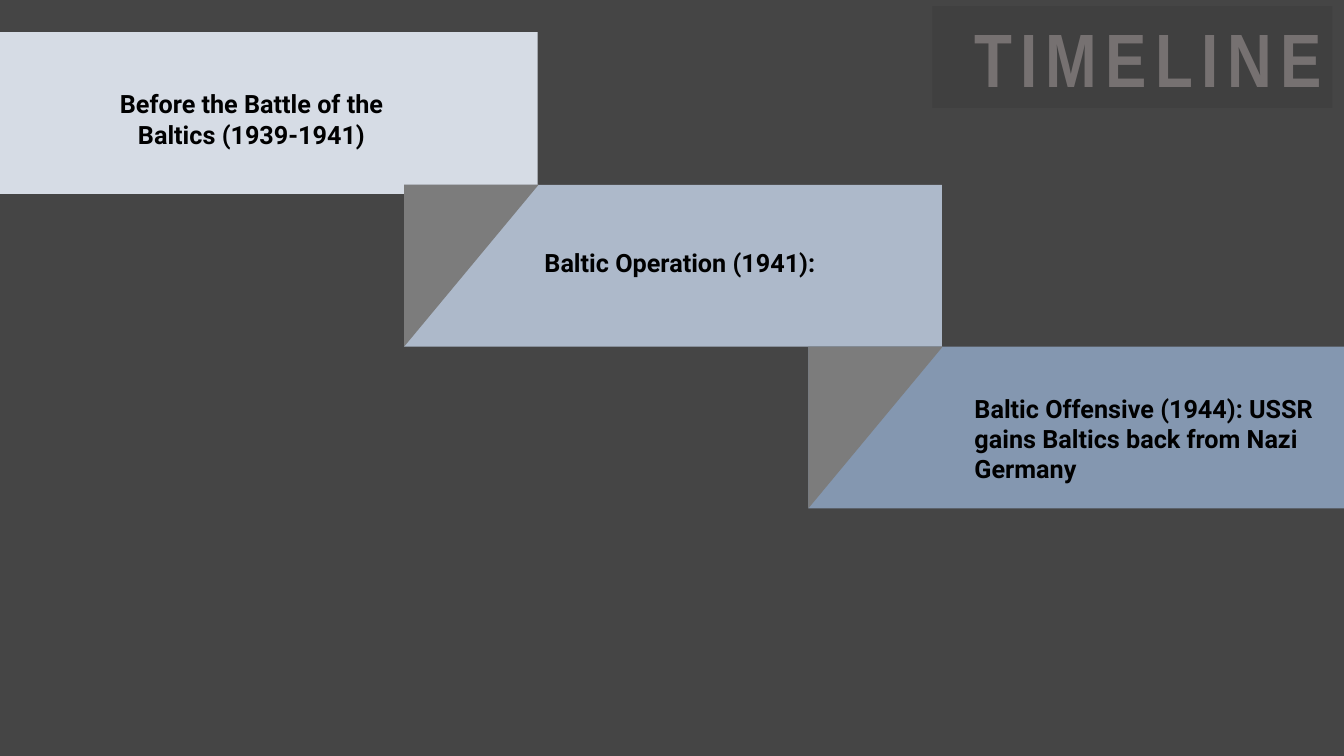
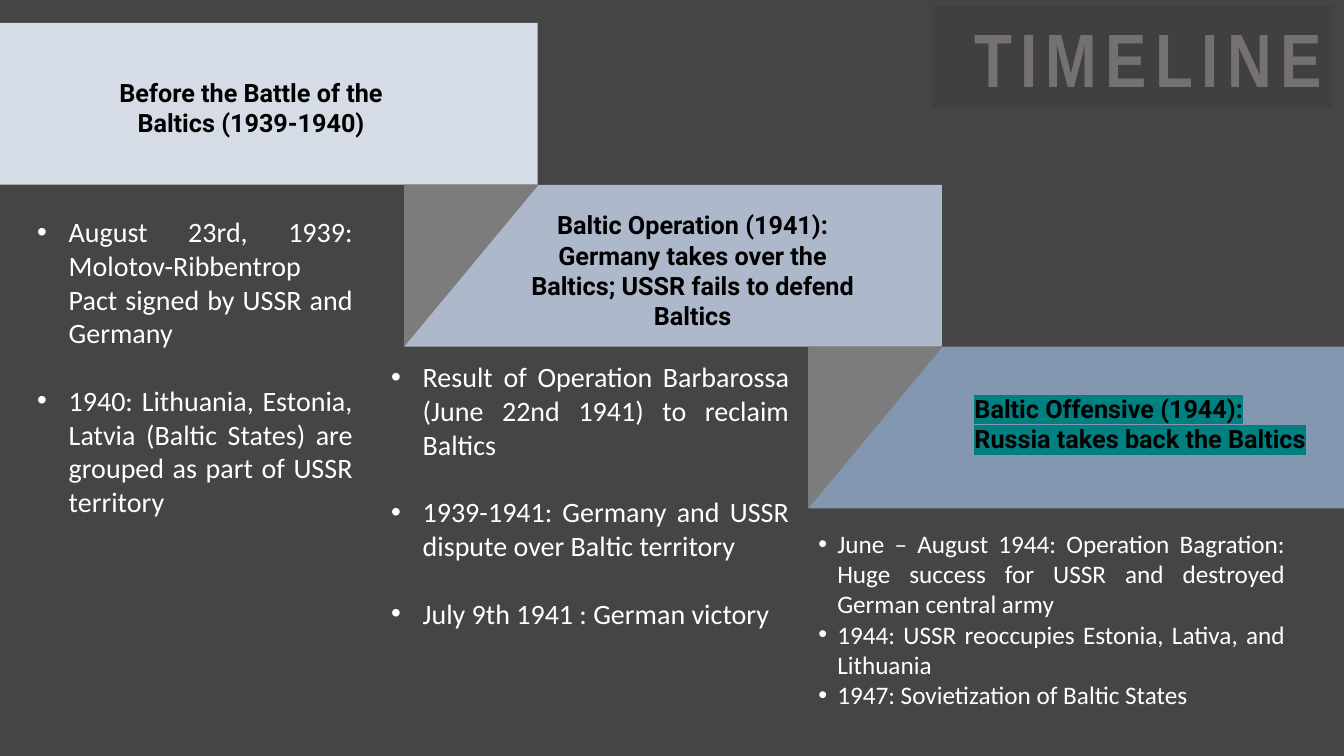
from lxml.etree import SubElement
from pptx import Presentation
from pptx.dml.color import RGBColor
from pptx.enum.shapes import MSO_SHAPE
from pptx.enum.text import MSO_ANCHOR, MSO_AUTO_SIZE, PP_ALIGN
from pptx.oxml import parse_xml
from pptx.oxml.ns import nsdecls, qn
from pptx.util import Pt

BACKGROUND = RGBColor(0x45, 0x45, 0x45)
TITLE_FILL = RGBColor(0x40, 0x40, 0x40)
TITLE_TEXT = RGBColor(0x76, 0x71, 0x71)
BANDS = [RGBColor(0xD6, 0xDC, 0xE5), RGBColor(0xAD, 0xB9, 0xCA), RGBColor(0x84, 0x97, 0xB0)]
FOLD = RGBColor(0x7C, 0x7C, 0x7C)
BLACK = RGBColor(0, 0, 0)
WHITE = RGBColor(0xFF, 0xFF, 0xFF)
HIGHLIGHT = RGBColor(0, 0x80, 0x80)

BAND_W, BAND_H, BAND_STEP = 384, 115.6, 288.7
FIRST_TOP, FOLD_W = 16.4, 96
TITLE_ONLY, COMPARISON = 5, 4

# Headings: left, top, width, height, alignment, highlighted, text
# Lists: left, top, width, height, size, indent, gap between items, items
SLIDES = [
    dict(
        layout=TITLE_ONLY,
        first_top=23,
        headings=[
            (71.3, 59.8, 216.7, 51, PP_ALIGN.CENTER, False,
             "Before the Battle of the Baltics (1939-1941)"),
            (356.4, 172.8, 258.5, 73, PP_ALIGN.CENTER, False, "Baltic Operation (1941):"),
            (689, 277.2, 257, 73, PP_ALIGN.LEFT, False,
             "Baltic Offensive (1944): USSR gains Baltics back from Nazi Germany"),
        ],
        lists=[],
    ),
    dict(
        layout=COMPARISON,
        first_top=FIRST_TOP,
        headings=[
            (69.5, 51.8, 219.6, 73, PP_ALIGN.CENTER, False,
             "Before the Battle of the Baltics (1939-1940)"),
            (365.8, 146.2, 257.8, 94, PP_ALIGN.CENTER, False,
             "Baltic Operation (1941): Germany takes over the Baltics; "
             "USSR fails to defend Baltics"),
            (689, 277.2, 257, 73, PP_ALIGN.LEFT, True,
             "Baltic Offensive (1944): Russia takes back the Baltics"),
        ],
        lists=[
            (19.4, 149.8, 239.8, 269, 20, 22.5, 24.4, [
                "August 23rd, 1939: Molotov-Ribbentrop Pact signed by USSR and Germany",
                "1940: Lithuania, Estonia, Latvia (Baltic States) are grouped "
                "as part of USSR territory",
            ]),
            (272.2, 253.4, 298.8, 223, 20, 22.5, 24.4, [
                "Result of Operation Barbarossa (June 22nd 1941) to reclaim Baltics",
                "1939-1941: Germany and USSR dispute over Baltic territory",
                "July 9th 1941 : German victory",
            ]),
            (577.4, 373.7, 347.8, 160, 18, 13.5, 0, [
                "June – August 1944: Operation Bagration: Huge success for USSR "
                "and destroyed German central army",
                "1944: USSR reoccupies Estonia, Lativa, and Lithuania",
                "1947: Sovietization of Baltic States",
            ]),
        ],
    ),
]


def place(sp, left, top, width, height):
    sp.left, sp.top, sp.width, sp.height = Pt(left), Pt(top), Pt(width), Pt(height)


def style(p, name, size, color, bold, align):
    p.alignment = align
    p.font.name, p.font.size, p.font.bold = name, Pt(size), bold
    p.font.color.rgb = color


prs = Presentation()
prs.slide_width, prs.slide_height = Pt(960), Pt(540)
fill = prs.slide_master.background.fill
fill.solid()
fill.fore_color.rgb = BACKGROUND

for content in SLIDES:
    s = prs.slides.add_slide(prs.slide_layouts[content["layout"]])

    title = s.shapes.title
    place(title, 666, 4.3, 285.8, 72.7)
    title.fill.solid()
    title.fill.fore_color.rgb = TITLE_FILL
    tf = title.text_frame
    tf.text = "TIMELINE"
    tf.auto_size = MSO_AUTO_SIZE.NONE
    tf.vertical_anchor = MSO_ANCHOR.MIDDLE
    p = tf.paragraphs[0]
    style(p, "Arial Narrow", 54, TITLE_TEXT, True, PP_ALIGN.RIGHT)
    p.runs[0].font._element.set("spc", "600")

    for i, color in enumerate(BANDS):
        left = i * BAND_STEP
        top = FIRST_TOP + i * BAND_H if i else content["first_top"]
        parts = [(MSO_SHAPE.RECTANGLE, BAND_W, color)]
        if i:
            parts.append((MSO_SHAPE.RIGHT_TRIANGLE, FOLD_W, FOLD))
        for kind, width, part_color in parts:
            sp = s.shapes.add_shape(kind, Pt(left), Pt(top), Pt(width), Pt(BAND_H))
            sp.shadow.inherit = False
            sp.fill.solid()
            sp.fill.fore_color.rgb = part_color
            sp.line.fill.background()
            if kind == MSO_SHAPE.RIGHT_TRIANGLE:
                sp._element.spPr.xfrm.set("flipV", "1")

    for left, top, width, height, align, highlighted, text in content["headings"]:
        tf = s.shapes.add_textbox(Pt(left), Pt(top), Pt(width), Pt(height)).text_frame
        tf.word_wrap = True
        tf.text = text
        p = tf.paragraphs[0]
        style(p, "Roboto", 18, BLACK, True, align)
        if highlighted:
            mark = SubElement(p.runs[0].font._element, qn("a:highlight"))
            SubElement(mark, qn("a:srgbClr")).set("val", str(HIGHLIGHT))

    bodies = [sp for sp in s.placeholders if 1 <= sp.placeholder_format.idx <= 4]
    for body, (left, top, width, height, size, indent, gap, items) in zip(bodies, content["lists"]):
        place(body, left, top, width, height)
        tf = body.text_frame
        tf.text = "\n".join(items)
        tf.auto_size = MSO_AUTO_SIZE.NONE
        tf.vertical_anchor = MSO_ANCHOR.TOP
        for i, p in enumerate(tf.paragraphs):
            style(p, "Calibri", size, WHITE, False, PP_ALIGN.JUSTIFY)
            p.space_before = Pt(gap if i else 0)
            pPr = p._p.get_or_add_pPr()
            pPr.set("marL", str(Pt(indent)))
            pPr.set("indent", str(-Pt(indent)))
            for bullet in ('<a:buFont %s typeface="Arial"/>', '<a:buChar %s char="•"/>'):
                pPr.insert_element_before(parse_xml(bullet % nsdecls("a")), "a:defRPr")

    for body in bodies[len(content["lists"]):]:
        body._element.getparent().remove(body._element)

prs.save("out.pptx")
